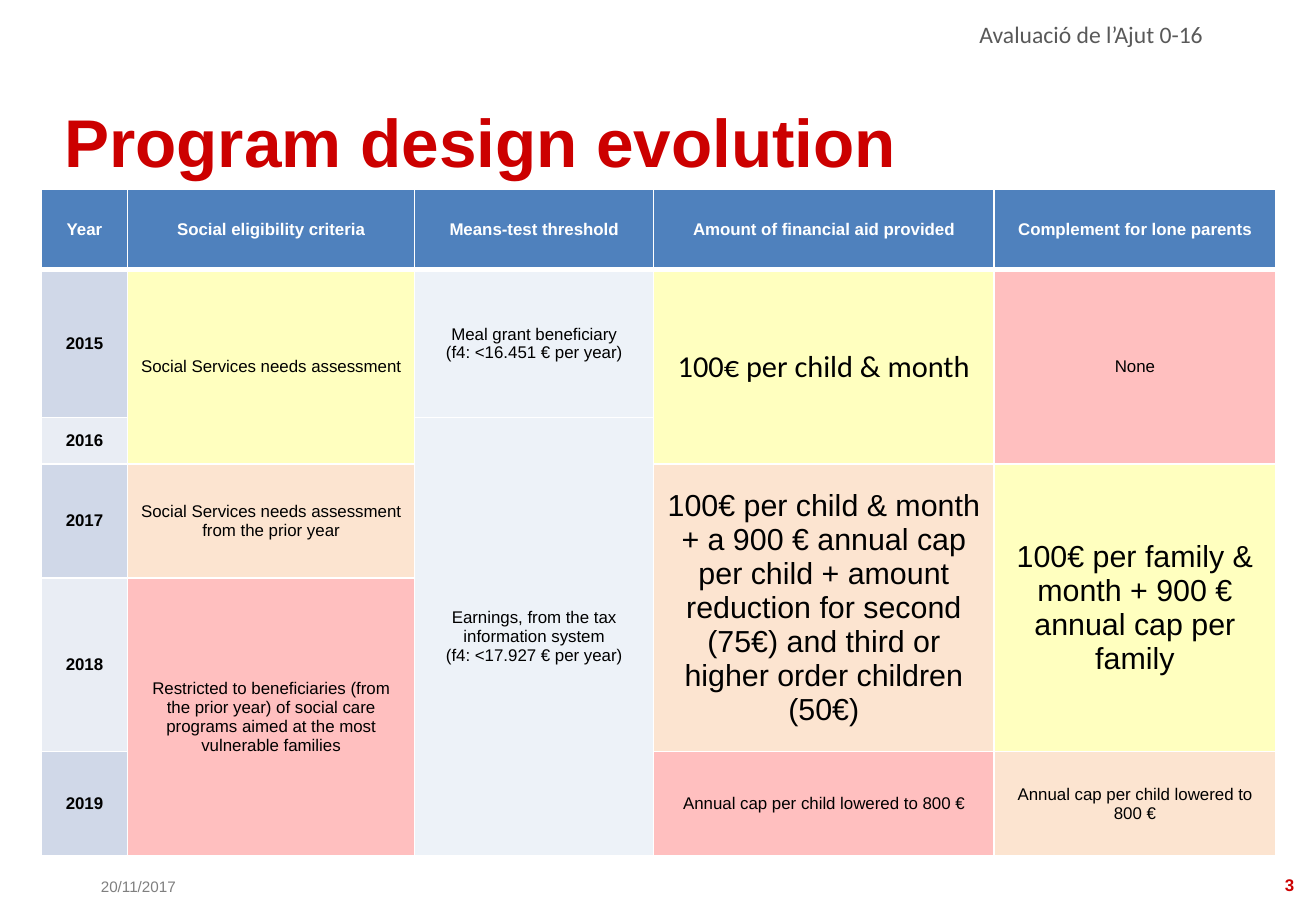
"""Build the slide on how the aid program's design evolved, 2015 to 2019."""
from lxml.etree import SubElement
from pptx import Presentation
from pptx.dml.color import RGBColor
from pptx.enum.text import MSO_ANCHOR as Anchor, MSO_AUTO_SIZE as AutoSize, PP_ALIGN as Align
from pptx.oxml.ns import qn
from pptx.util import Inches, Pt

WHITE = RGBColor(0xFF, 0xFF, 0xFF)
BLACK = RGBColor(0x00, 0x00, 0x00)
BRAND_RED = RGBColor(0xCC, 0x00, 0x00)
DATE_GREY = RGBColor(0x7F, 0x7F, 0x7F)
HEADER_GREY = RGBColor(0x59, 0x59, 0x59)
HEADING_BLUE = RGBColor(0x4F, 0x81, 0xBD)
BAND_DARK = RGBColor(0xD0, 0xD8, 0xE8)
BAND_LIGHT = RGBColor(0xE9, 0xED, 0xF4)
YELLOW = RGBColor(0xFF, 0xFF, 0x00)
ORANGE = RGBColor(0xF7, 0x96, 0x46)
RED = RGBColor(0xFF, 0x00, 0x00)
PALE_BLUE = RGBColor(0xB9, 0xCD, 0xE5)


def write(frame, text, size, color, bold=False, align=Align.LEFT, font="Arial"):
    """Write each line of text as a paragraph with one formatted run."""
    for index, line in enumerate(text.split("\n")):
        para = frame.add_paragraph() if index else frame.paragraphs[0]
        para.alignment = align
        span = para.add_run()
        span.text = line
        span.font.name = font
        span.font.size = Pt(size)
        span.font.bold = bold
        span.font.color.rgb = color


def paint(cell, color, opacity=100):
    """Fill a cell with a color at the given opacity in percent."""
    cell.fill.solid()
    cell.fill.fore_color.rgb = color
    if opacity < 100:
        tint = cell._tc.tcPr.find(qn("a:solidFill")).find(qn("a:srgbClr"))
        SubElement(tint, qn("a:alpha"), val=str(opacity * 1000))


deck = Presentation()
deck.slide_width, deck.slide_height = Inches(10.83), Inches(7.5)
page = deck.slides.add_slide(deck.slide_layouts[5])

title = page.shapes.title
title.left, title.top = Inches(0.53), Inches(0.75)
title.width, title.height = Inches(10.16), Inches(0.81)
title.fill.solid()
title.fill.fore_color.rgb = WHITE
title.line.color.rgb = WHITE
title.line.width = Pt(0.75)
frame = title.text_frame
frame.word_wrap = True
frame.auto_size = AutoSize.NONE
frame.vertical_anchor = Anchor.MIDDLE
frame.margin_left = 0
write(frame, "Program design evolution", 40, BRAND_RED, True)

header = page.shapes.add_textbox(Inches(3.17), Inches(0.25), Inches(6.83), Inches(0.21))
header.text_frame.word_wrap = True
write(header.text_frame, "Avaluació de l’Ajut 0-16", 14, HEADER_GREY, align=Align.RIGHT, font="Calibri")
header.text_frame.paragraphs[0].line_spacing = 0.3

footers = [
    (0.83, 0.92, "20/11/2017", 9, DATE_GREY, False, Align.LEFT),
    (10.25, 0.5, "3", 10, BRAND_RED, True, Align.RIGHT),
]
for left, width, text, size, color, bold, align in footers:
    box = page.shapes.add_textbox(Inches(left), Inches(7.18), Inches(width), Inches(0.24))
    box.text_frame.word_wrap = False
    box.text_frame.vertical_anchor = Anchor.BOTTOM
    box.text_frame.margin_left = 0
    write(box.text_frame, text, size, color, bold, align)

column_widths = [0.71, 2.36, 1.97, 2.8, 2.32]
row_heights = [0.66, 1.22, 0.38, 0.94, 1.43, 0.86]
table = page.shapes.add_table(
    len(row_heights), len(column_widths), Inches(0.34), Inches(1.56),
    Inches(sum(column_widths)), Inches(sum(row_heights)),
).table
for column, width in zip(table.columns, column_widths):
    column.width = Inches(width)
for row, height in zip(table.rows, row_heights):
    row.height = Inches(height)

for row_index, row in enumerate(table.rows):
    for cell in row.cells:
        cell.vertical_anchor = Anchor.MIDDLE
        properties = cell._tc.get_or_add_tcPr()
        for side in "LRTB":
            thick = (row_index, side) in [(0, "B"), (1, "T")]
            border = SubElement(properties, qn(f"a:ln{side}"), w=str(Pt(3 if thick else 1)))
            fill = SubElement(border, qn("a:solidFill"))
            SubElement(fill, qn("a:srgbClr"), val=str(WHITE))

headings = [
    "Year", "Social eligibility criteria", "Means-test threshold",
    "Amount of financial aid provided", "Complement for lone parents",
]
for column, text in enumerate(headings):
    cell = table.cell(0, column)
    paint(cell, HEADING_BLUE)
    write(cell.text_frame, text, 10, WHITE, True, Align.CENTER)

for row, year in enumerate(range(2015, 2020), start=1):
    cell = table.cell(row, 0)
    paint(cell, BAND_DARK if row % 2 else BAND_LIGHT)
    write(cell.text_frame, str(year), 10, BLACK, True, Align.CENTER)

rules = [
    (1, 1, 2, YELLOW, 10, "Arial", "Social Services needs assessment"),
    (3, 1, 1, ORANGE, 10, "Arial", "Social Services needs assessment from the prior year"),
    (4, 1, 2, RED, 10, "Arial", "Restricted to beneficiaries (from the prior year) of social care "
     "programs aimed at the most vulnerable families"),
    (1, 2, 1, PALE_BLUE, 10, "Arial", "Meal grant beneficiary\n(f4: <16.451 € per year)"),
    (2, 2, 4, PALE_BLUE, 10, "Arial", "Earnings, from the tax information system\n(f4: <17.927 € per year)"),
    (1, 3, 2, YELLOW, 18, "Calibri", "100€ per child & month"),
    (3, 3, 2, ORANGE, 18, "Arial", "100€ per child & month + a 900 € annual cap per child + amount "
     "reduction for second (75€) and third or higher order children (50€)"),
    (5, 3, 1, RED, 10, "Arial", "Annual cap per child lowered to 800 €"),
    (1, 4, 2, RED, 10, "Arial", "None"),
    (3, 4, 2, YELLOW, 18, "Arial", "100€ per family & month + 900 € annual cap per family"),
    (5, 4, 1, ORANGE, 10, "Arial", "Annual cap per child lowered to 800 €"),
]
for row, column, years, color, size, font, text in rules:
    cell = table.cell(row, column)
    if years > 1:
        cell.merge(table.cell(row + years - 1, column))
    paint(cell, color, 25)
    write(cell.text_frame, text, size, BLACK, align=Align.CENTER, font=font)

deck.save("out.pptx")
